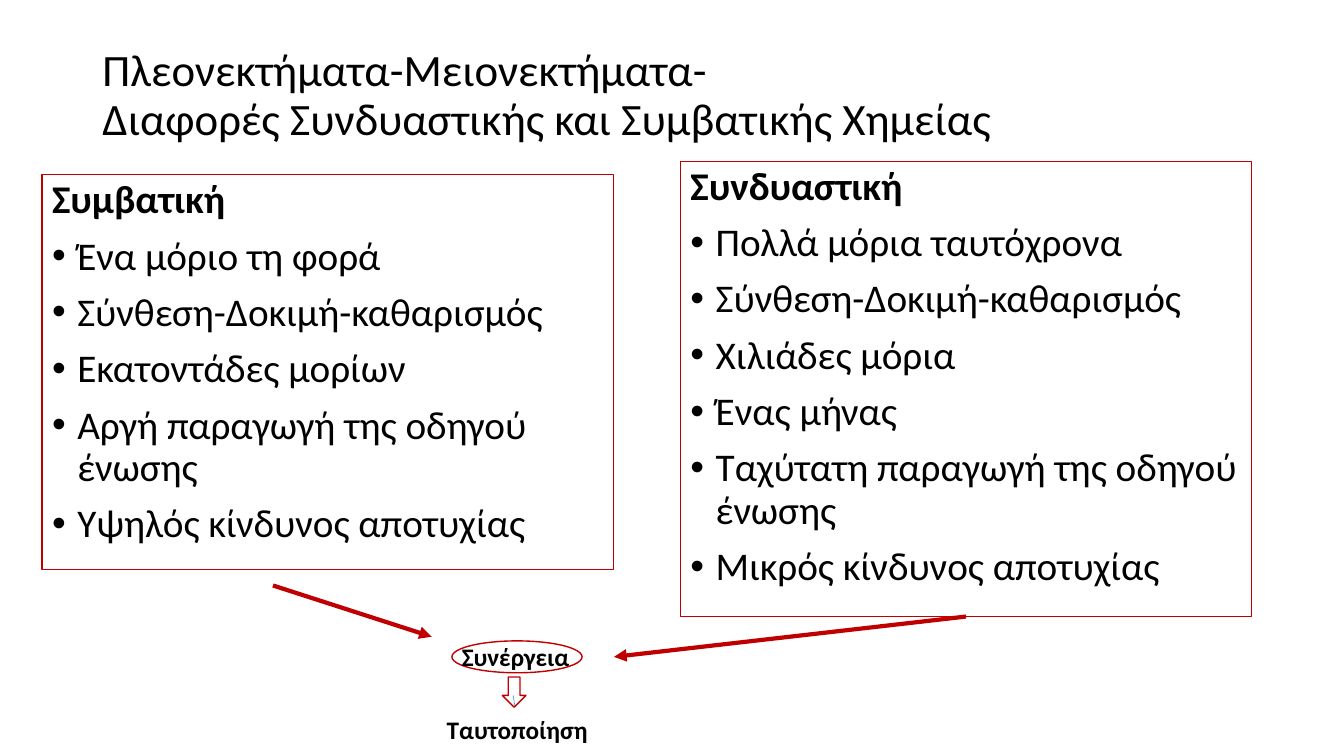
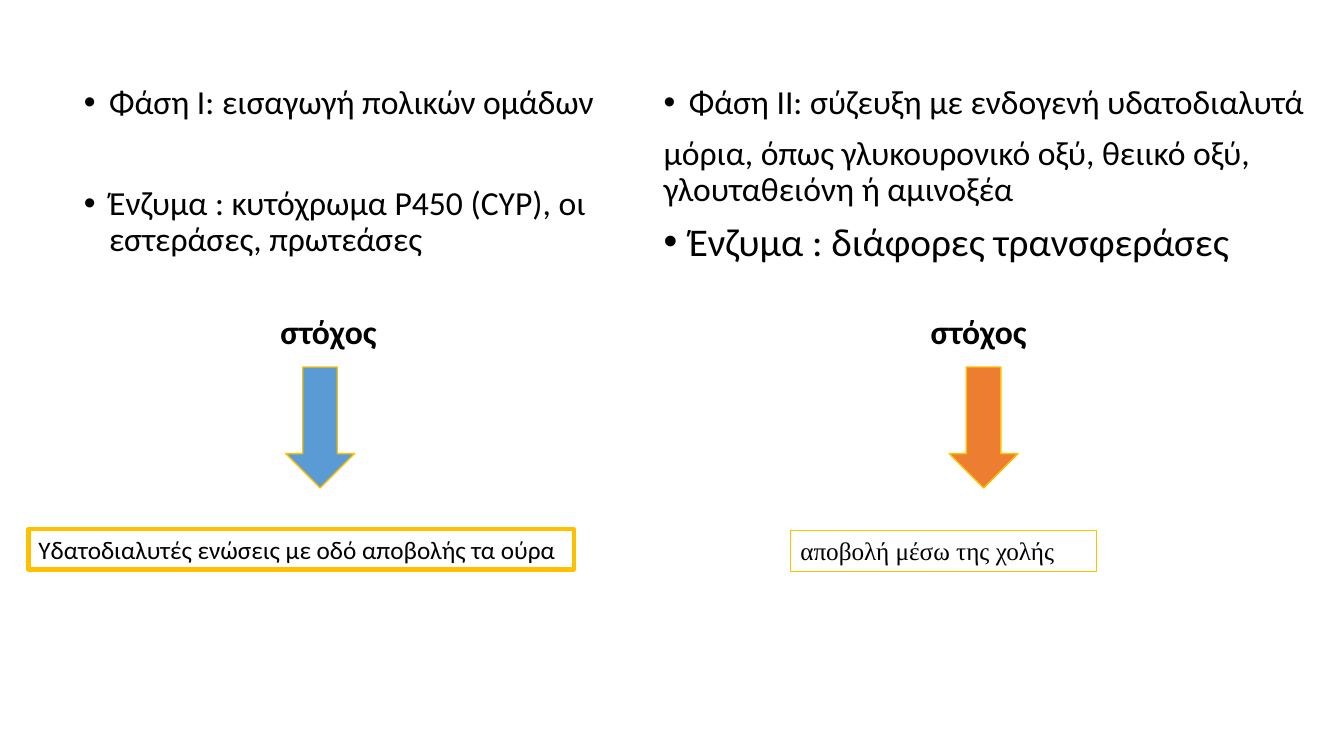
"""Build two slides comparing chemistry approaches and metabolic phases."""
from lxml.etree import SubElement
from pptx import Presentation
from pptx.dml.color import RGBColor
from pptx.enum.shapes import MSO_CONNECTOR, MSO_SHAPE
from pptx.enum.text import MSO_ANCHOR, MSO_AUTO_SIZE, PP_ALIGN
from pptx.oxml.ns import qn
from pptx.util import Inches, Pt

COLORS = {name: RGBColor.from_string(value) for name, value in {
    "text": "000000", "red": "C00000", "gold": "FFC000",
    "blue": "5B9BD5", "orange": "ED7D31"}.items()}
FONT = "Calibri"
COLUMNS, ROWS = 160, 90
INDENT = Inches(0.25)

deck = Presentation()
deck.slide_width, deck.slide_height = Inches(13.33), Inches(7.5)
column, row = deck.slide_width / COLUMNS, deck.slide_height / ROWS
two_lists = deck.slide_layouts[3]


def place(shape, left, top, width, height):
    """Put a shape on the grid."""
    shape.left, shape.top = round(left * column), round(top * row)
    shape.width, shape.height = round(width * column), round(height * row)


def write(box, lines, font=FONT, spacing=None, anchor=MSO_ANCHOR.TOP):
    """Fill a box with (text, size, bold, bullet, space before) lines."""
    frame = box.text_frame
    frame.text = "\n".join(line[0] for line in lines)
    frame.word_wrap, frame.auto_size = True, MSO_AUTO_SIZE.NONE
    frame.vertical_anchor = anchor
    for para, (_, size, bold, bullet, before) in zip(frame.paragraphs, lines):
        para.alignment = PP_ALIGN.LEFT
        para.line_spacing, para.space_before = spacing, Pt(before)
        properties = para._p.get_or_add_pPr()
        properties.set("marL", str(INDENT if bullet else 0))
        properties.set("indent", str(-INDENT if bullet else 0))
        if bullet:
            SubElement(properties, qn("a:buFont"), typeface="Arial")
            SubElement(properties, qn("a:buChar"), char="•")
        else:
            SubElement(properties, qn("a:buNone"))
        for span in para.runs:
            span.font.name, span.font.size = font, Pt(size)
            span.font.bold = bold
            span.font.color.rgb = COLORS["text"]


comparison = deck.slides.add_slide(two_lists)
title = comparison.shapes.title
place(title, 11, 4.8, 138, 13.4)
heading = "Πλεονεκτήματα-Μειονεκτήματα-\vΔιαφορές Συνδυαστικής και Συμβατικής Χημείας"
write(title, [(heading, 32, False, False, 0)], spacing=0.9, anchor=MSO_ANCHOR.MIDDLE)

approaches = [
    (1, (5, 20.8, 68, 47), "Συμβατική",
     ["Ένα μόριο τη φορά", "Σύνθεση-Δοκιμή-καθαρισμός", "Εκατοντάδες μορίων",
      "Αργή παραγωγή της οδηγού ένωσης", "Υψηλός κίνδυνος αποτυχίας"]),
    (2, (81, 19.2, 68, 54.2), "Συνδυαστική",
     ["Πολλά μόρια ταυτόχρονα", "Σύνθεση-Δοκιμή-καθαρισμός", "Χιλιάδες μόρια",
      "Ένας μήνας", "Ταχύτατη παραγωγή της οδηγού ένωσης",
      "Μικρός κίνδυνος αποτυχίας"]),
]
for index, area, name, points in approaches:
    body = comparison.placeholders[index]
    place(body, *area)
    body.line.color.rgb, body.line.width = COLORS["red"], Pt(0.75)
    write(body, [(name, 28, True, False, 10)]
          + [(point, 28, False, True, 10) for point in points], spacing=0.9)

connections = [
    (32.5, 69.7, 51.4, 75.8, "red", 3, True),
    (115, 73.4, 73.1, 78.2, "red", 3, True),
    (61.1, 82.8, 61.3, 84.1, "blue", 0.5, False),
]
for x1, y1, x2, y2, color, weight, has_head in connections:
    connector = comparison.shapes.add_connector(
        MSO_CONNECTOR.STRAIGHT, round(x1 * column), round(y1 * row),
        round(x2 * column), round(y2 * row))
    connector.line.color.rgb, connector.line.width = COLORS[color], Pt(weight)
    if has_head:
        SubElement(connector.line._get_or_add_ln(), qn("a:tailEnd"), type="triangle")
    SubElement(connector._element.spPr, qn("a:effectLst"))

phases = deck.slides.add_slide(two_lists)
phases.shapes.title._element.getparent().remove(phases.shapes.title._element)
phase_lists = [
    (1, (8.8, 9.6, 70.2, 71.5),
     [("Φάση Ι: εισαγωγή πολικών ομάδων", 24, False, True, 10),
      ("Ένζυμα : κυτόχρωμα P450 (CYP), οι εστεράσες, πρωτεάσες", 24, False, True, 46)]),
    (2, (77.8, 9.6, 80.3, 71.5),
     [("Φάση ΙΙ: σύζευξη με ενδογενή υδατοδιαλυτά", 24, False, True, 10),
      ("μόρια, όπως γλυκουρονικό οξύ, θειικό οξύ, γλουταθειόνη ή αμινοξέα",
       24, False, False, 10),
      ("Ένζυμα : διάφορες τρανσφεράσες", 28, False, True, 10)]),
]
for index, area, lines in phase_lists:
    body = phases.placeholders[index]
    place(body, *area)
    write(body, lines, spacing=0.9)

outlines = [
    (comparison, MSO_SHAPE.DOWN_ARROW, (59.8, 80.6, 2.8, 3.6), None, "red"),
    (comparison, MSO_SHAPE.OVAL, (53.8, 76.3, 15.5, 3.8), None, "red"),
    (phases, MSO_SHAPE.DOWN_ARROW, (34, 43.7, 8.2, 14.4), "blue", "gold"),
    (phases, MSO_SHAPE.DOWN_ARROW, (113, 43.7, 8.2, 14.4), "orange", "gold"),
]
for page, kind, area, fill, line in outlines:
    shape = page.shapes.add_shape(kind, 0, 0, 0, 0)
    place(shape, *area)
    shape.shadow.inherit = False
    shape.line.color.rgb, shape.line.width = COLORS[line], Pt(1)
    if fill:
        shape.fill.solid()
        shape.fill.fore_color.rgb = COLORS[fill]
    else:
        shape.fill.background()

labels = [
    (comparison, "Συνέργεια", (53.8, 75.8, 19.3, 4.8), 18, True, FONT, 0),
    (comparison, "Ταυτοποίηση", (52, 84.4, 24.1, 4.8), 18, True, FONT, 0),
    (phases, "στόχος", (32.2, 36.4, 15, 6), 24, True, FONT, 0),
    (phases, "στόχος", (109.6, 36.4, 15, 6), 24, True, FONT, 0),
    (phases, "Υδατοδιαλυτές ενώσεις με οδό αποβολής τα ούρα",
     (3.4, 63, 64.9, 4.8), 18, False, FONT, 3),
    (phases, "αποβολή μέσω της χολής",
     (94.1, 63.2, 36.5, 4.8), 18, False, "Times New Roman", 0.75),
]
for page, text, area, size, bold, font, border in labels:
    box = page.shapes.add_textbox(0, 0, 0, 0)
    place(box, *area)
    write(box, [(text, size, bold, False, 0)], font=font)
    if border:
        box.line.color.rgb, box.line.width = COLORS["gold"], Pt(border)

deck.save("out.pptx")
